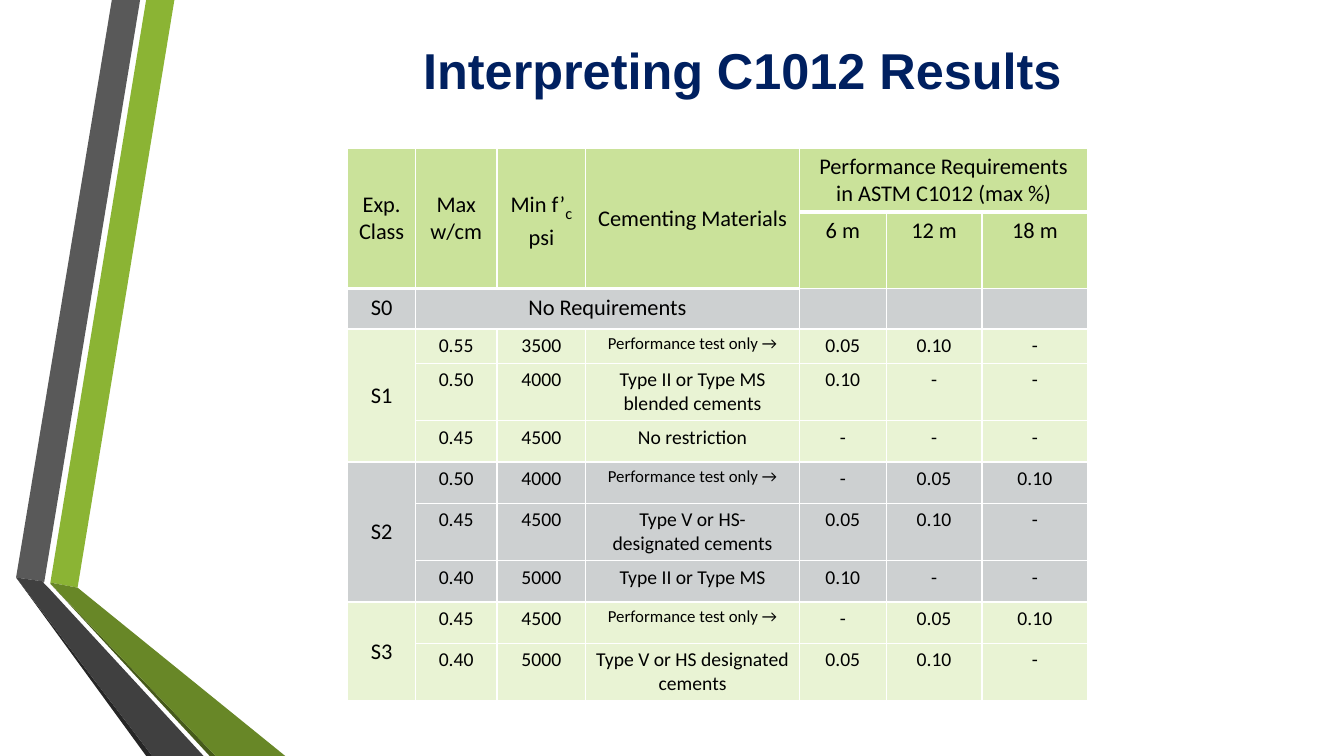
"""Builds the slide on interpreting C1012 sulfate test results."""
from lxml.etree import SubElement
from pptx import Presentation
from pptx.dml.color import RGBColor
from pptx.enum.text import MSO_ANCHOR, PP_ALIGN
from pptx.oxml.ns import qn
from pptx.util import Inches, Pt

THEME = {
    "navy": "002060", "black": "000000", "white": "FFFFFF",
    "head": "BCDA7E", "gray": "CDD0D1", "pale": "E9F3D4",
    "lime": "8BB434", "slate": "595959", "ink": "262626",
    "moss": "465A1A", "olive": "688727", "coal": "404040",
    "title": 36, "sub": 20, "label": 16, "body": 14, "note": 12,
    "thin": 1, "thick": 3, "opaque": 78,
}
TITLE = "Interpreting C1012 Results"
ONLY = "Performance test only →"
HEADS = [
    ["Exp. Class", "Max w/cm", ("Min f’", "c", " psi"), "Cementing Materials",
     "Performance Requirements in ASTM C1012 (max %)", "", ""],
    ["", "", "", "", "6 m", "12 m", "18 m"],
]
GROUPS = [
    ("S0", "gray", [["No Requirements", "", "", "", "", ""]]),
    ("S1", "pale", [
        ["0.55", "3500", ONLY, "0.05", "0.10", "-"],
        ["0.50", "4000", "Type II or Type MS blended cements", "0.10", "-", "-"],
        ["0.45", "4500", "No restriction", "-", "-", "-"]]),
    ("S2", "gray", [
        ["0.50", "4000", ONLY, "-", "0.05", "0.10"],
        ["0.45", "4500", "Type V or HS-designated cements", "0.05", "0.10", "-"],
        ["0.40", "5000", "Type II or Type MS", "0.10", "-", "-"]]),
    ("S3", "pale", [
        ["0.45", "4500", ONLY, "-", "0.05", "0.10"],
        ["0.40", "5000", "Type V or HS designated cements", "0.05", "0.10", "-"]]),
]
WIDTHS = [0.67, 0.81, 0.88, 2.12, 0.86, 0.95, 1.05]
HEIGHTS = [0.63, 0.76, 0.4, 0.34, 0.57, 0.41, 0.41, 0.57, 0.41, 0.41, 0.57]
RIBBONS = [
    ("lime", [(0.5, 5.78), (0.77, 5.83), (1.73, 0), (1.45, 0)]),
    ("slate", [(1.39, 0), (1.11, 0), (0.16, 5.73), (0.44, 5.77)]),
    ("ink", [(0.16, 5.73), (1.45, 7.5), (1.51, 7.5)]),
    ("moss", [(0.5, 5.79), (2.08, 7.5), (2.14, 7.5)]),
    ("olive", [(0.5, 5.79), (2.14, 7.5), (2.83, 7.5), (0.77, 5.83), (0.5, 5.78)]),
    ("coal", [(2.02, 7.5), (0.48, 5.83), (0.43, 5.78), (0.44, 5.77),
              (0.16, 5.73), (1.51, 7.5)]),
]


def paint(fill, color):
    fill.solid()
    fill.fore_color.rgb = RGBColor.from_string(THEME[color])


def write(frame, text, size="body", color="black", face="Calibri", bold=False):
    frame.word_wrap = True
    para = frame.paragraphs[0]
    para.alignment = PP_ALIGN.CENTER
    para.font.size = Pt(THEME[size])
    parts = text if isinstance(text, tuple) else (text,)
    for spot, part in enumerate(parts):
        if not part:
            continue
        run = para.add_run()
        run.text = part
        font = run.font
        font.name, font.bold = face, bold
        font.size = Pt(THEME["sub" if spot == 1 else size])
        font.color.rgb = RGBColor.from_string(THEME[color])
        if spot == 1:
            run._r.get_or_add_rPr().set("baseline", "-25000")


def edge(cell, side, width):
    line = SubElement(cell._tc.get_or_add_tcPr(), qn("a:ln" + side),
                      w=str(Pt(THEME[width])))
    solid = SubElement(line, qn("a:solidFill"))
    SubElement(solid, qn("a:srgbClr"), val=THEME["white"])


def weight(row, col):
    return "thick" if row == 0 or (row == 1 and col < 4) else "thin"


def style(cell, row, col, color):
    for side, width in (("L", "thin"), ("R", "thin"),
                        ("T", weight(row - 1, col) if row else "thin"),
                        ("B", weight(row, col))):
        edge(cell, side, width)
    paint(cell.fill, color)
    if color == "head":
        tint = cell._tc.tcPr.find(qn("a:solidFill"))[0]
        SubElement(tint, qn("a:alpha"), val=str(THEME["opaque"] * 1000))
    middle = col == 0 and row != 2 or row == 0 and col < 4
    cell.vertical_anchor = MSO_ANCHOR.MIDDLE if middle else MSO_ANCHOR.TOP


def draw_ribbons(slide):
    group = slide.shapes.add_group_shape()
    for color, points in RIBBONS:
        first, *rest = [(Inches(x), Inches(y)) for x, y in points]
        pen = group.shapes.build_freeform(*first)
        pen.add_line_segments(rest, close=True)
        shape = pen.convert_to_shape()
        shape.shadow.inherit = False
        paint(shape.fill, color)
        shape.line.fill.background()


def draw_table(slide):
    rows = [("head", line) for line in HEADS]
    spans = [(0, col, 1, col) for col in range(4)] + [(0, 4, 0, 6), (2, 1, 2, 3)]
    for name, color, lines in GROUPS:
        top = len(rows)
        rows += [(color, ["" if i else name] + line) for i, line in enumerate(lines)]
        if len(lines) > 1:
            spans.append((top, 0, len(rows) - 1, 0))
    table = slide.shapes.add_table(
        len(rows), len(WIDTHS), Inches(3.45), Inches(1.47),
        Inches(sum(WIDTHS)), Inches(sum(HEIGHTS))).table
    table.first_row = table.horz_banding = False
    for col, width in zip(table.columns, WIDTHS):
        col.width = Inches(width)
    for row, height in zip(table.rows, HEIGHTS):
        row.height = Inches(height)
    for r, (color, line) in enumerate(rows):
        for c, text in enumerate(line):
            cell = table.cell(r, c)
            style(cell, r, c, color)
            size = "note" if text == ONLY else "label" if r < 3 or c == 0 else "body"
            write(cell.text_frame, text, size=size)
    for top, left, low, right in spans:
        table.cell(top, left).merge(table.cell(low, right))


def main():
    deck = Presentation()
    deck.slide_width, deck.slide_height = Inches(13.33), Inches(7.5)
    slide = deck.slides.add_slide(deck.slide_layouts[6])
    draw_ribbons(slide)
    box = slide.shapes.add_textbox(Inches(1.89), Inches(0.16),
                                   Inches(10.95), Inches(1.06))
    box.text_frame.vertical_anchor = MSO_ANCHOR.MIDDLE
    write(box.text_frame, TITLE, size="title", color="navy", face="Arial", bold=True)
    draw_table(slide)
    deck.save("out.pptx")


if __name__ == "__main__":
    main()
